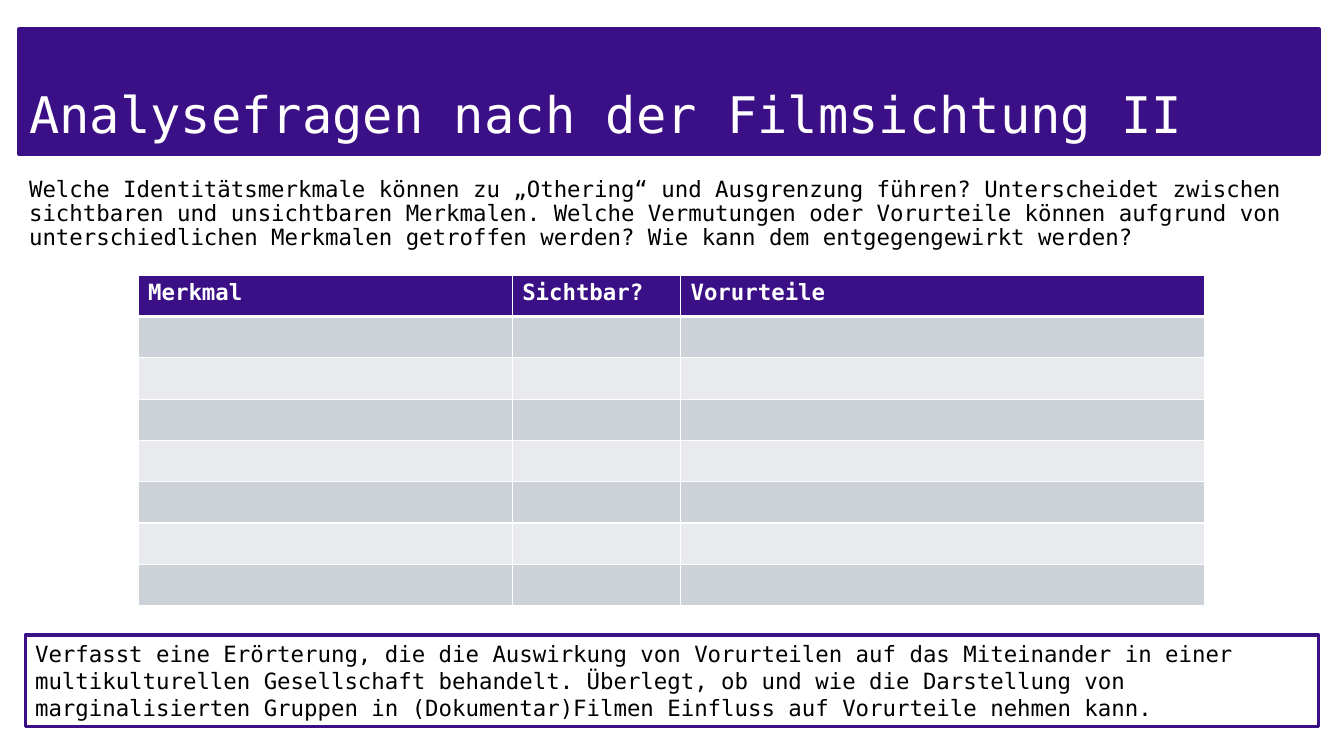
from lxml import etree
from pptx import Presentation
from pptx.dml.color import RGBColor
from pptx.enum.shapes import MSO_SHAPE
from pptx.enum.text import MSO_ANCHOR, PP_ALIGN
from pptx.oxml.ns import qn
from pptx.util import Inches, Pt

RECTANGLE = MSO_SHAPE.RECTANGLE
TOP, MIDDLE, BOTTOM = MSO_ANCHOR.TOP, MSO_ANCHOR.MIDDLE, MSO_ANCHOR.BOTTOM
LEFT = PP_ALIGN.LEFT

FONT = "DejaVu Sans Mono"
PURPLE, WHITE, BLACK = "3B0F85", "FFFFFF", "000000"
BANDS = ("CCD2D8", "E8EAED")

TITLE = "Analysefragen nach der Filmsichtung II"
QUESTIONS = (
    "Welche Identitätsmerkmale können zu „Othering“ und Ausgrenzung führen? "
    "Unterscheidet zwischen sichtbaren und unsichtbaren Merkmalen. Welche "
    "Vermutungen oder Vorurteile können aufgrund von unterschiedlichen Merkmalen "
    "getroffen werden? Wie kann dem entgegengewirkt werden?"
)
TASK = (
    "Verfasst eine Erörterung, die die Auswirkung von Vorurteilen auf das "
    "Miteinander in einer multikulturellen Gesellschaft behandelt. Überlegt, ob "
    "und wie die Darstellung von marginalisierten Gruppen in (Dokumentar)Filmen "
    "Einfluss auf Vorurteile nehmen kann."
)
COLUMNS = (("Merkmal", 3.71), ("Sichtbar?", 1.67), ("Vorurteile", 5.2))
ROW_COUNT, ROW_HEIGHT = 8, 0.41


def color(value):
    """Turn a hex string into a colour."""
    return RGBColor.from_string(value)


def write(frame, text, size, text_color, bold=False, spacing=1.0):
    """Set one left-aligned paragraph and format it."""
    frame.word_wrap = True
    frame.text = text
    paragraph = frame.paragraphs[0]
    paragraph.alignment = LEFT
    paragraph.line_spacing = spacing
    for run in paragraph.runs:
        run.font.name = FONT
        run.font.size = Pt(size)
        run.font.bold = bold
        run.font.color.rgb = color(text_color)


def add_panel(slide, box, fill, line_width, anchor):
    """Add a purple-edged rectangle and return its text frame."""
    panel = slide.shapes.add_shape(RECTANGLE, *map(Inches, box))
    panel.shadow.inherit = False
    panel.fill.solid()
    panel.fill.fore_color.rgb = color(fill)
    panel.line.color.rgb = color(PURPLE)
    panel.line.width = Pt(line_width)
    panel.text_frame.vertical_anchor = anchor
    return panel.text_frame


def add_questions(slide):
    """Add the discussion questions below the title."""
    questions = slide.shapes.add_textbox(*map(Inches, (0.19, 1.72, 12.89, 3.93)))
    questions.text_frame.vertical_anchor = TOP
    write(questions.text_frame, QUESTIONS, 16, BLACK, spacing=0.9)


def set_borders(cell, top, bottom):
    """Draw white cell borders with the given top and bottom widths."""
    properties = cell._tc.get_or_add_tcPr()
    for side, width in (("L", 1), ("R", 1), ("T", top), ("B", bottom)):
        border = etree.SubElement(properties, qn(f"a:ln{side}"), w=str(Pt(width)))
        fill = etree.SubElement(border, qn("a:solidFill"))
        etree.SubElement(fill, qn("a:srgbClr"), val=WHITE)


def add_answer_table(slide):
    """Add the banded table with a header and empty answer rows."""
    width = sum(column_width for _, column_width in COLUMNS)
    table = slide.shapes.add_table(
        ROW_COUNT, len(COLUMNS), Inches(1.37), Inches(2.73),
        Inches(width), Inches(ROW_HEIGHT * ROW_COUNT),
    ).table
    for row in table.rows:
        row.height = Inches(ROW_HEIGHT)
    for column_index, (heading, column_width) in enumerate(COLUMNS):
        table.columns[column_index].width = Inches(column_width)
        for row_index in range(ROW_COUNT):
            cell = table.cell(row_index, column_index)
            is_header = row_index == 0
            set_borders(cell, 3 if row_index == 1 else 1, 3 if is_header else 1)
            cell.fill.solid()
            fill = PURPLE if is_header else BANDS[(row_index - 1) % 2]
            cell.fill.fore_color.rgb = color(fill)
            if is_header:
                write(cell.text_frame, heading, 16, WHITE, bold=True)


def main():
    """Build and save the slide."""
    presentation = Presentation()
    presentation.slide_width = Inches(13.33)
    presentation.slide_height = Inches(7.5)
    slide = presentation.slides.add_slide(presentation.slide_layouts[6])

    title = add_panel(slide, (0.19, 0.29, 12.89, 1.24), PURPLE, 2.5, BOTTOM)
    title.margin_bottom = Inches(0.1)
    write(title, TITLE, 36, WHITE, spacing=0.9)
    add_questions(slide)
    task = add_panel(slide, (0.25, 6.3, 12.83, 0.91), WHITE, 2.25, MIDDLE)
    write(task, TASK, 16, BLACK)
    add_answer_table(slide)

    presentation.save("out.pptx")


if __name__ == "__main__":
    main()
